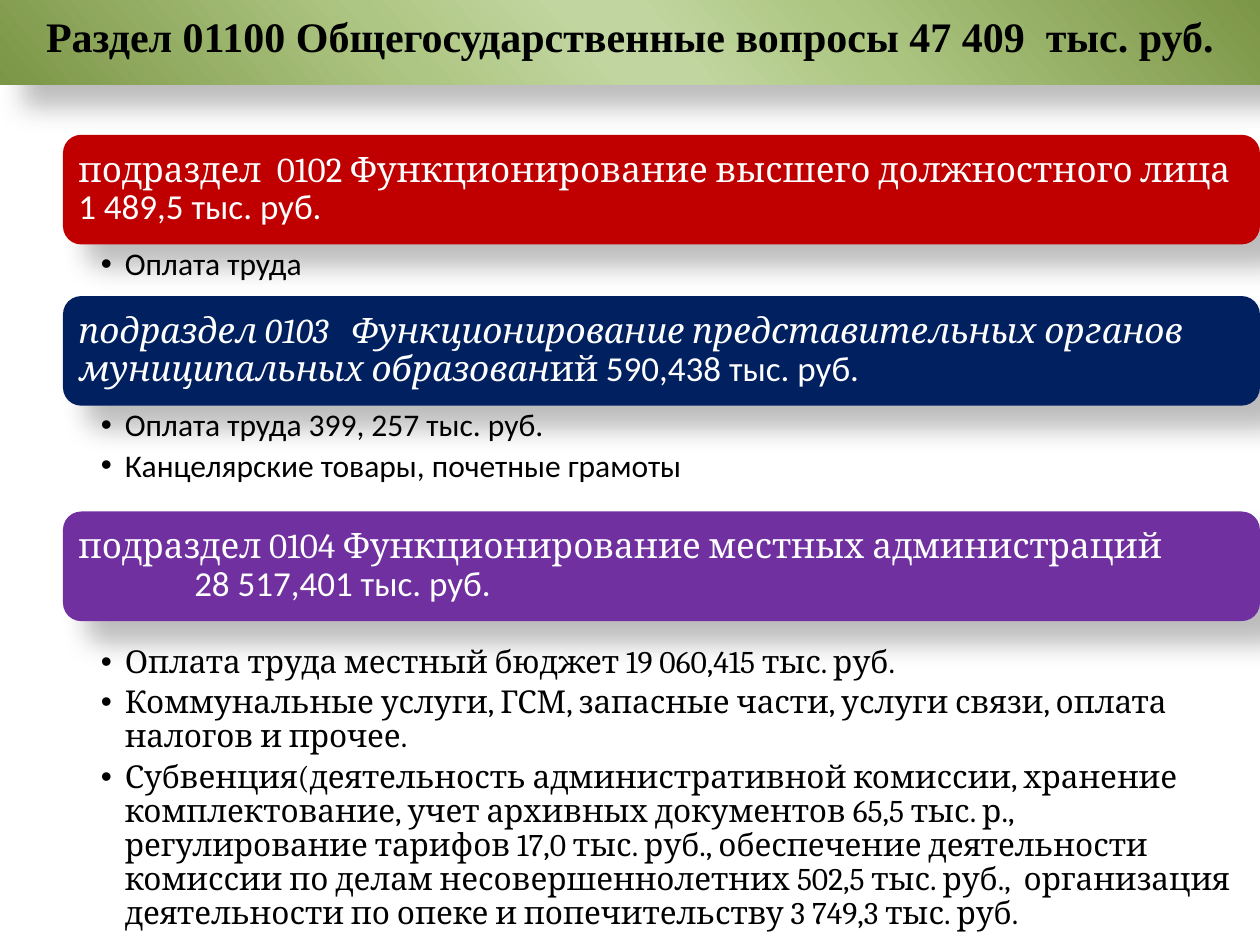
from lxml.etree import SubElement
from pptx import Presentation
from pptx.dml.color import RGBColor
from pptx.enum.shapes import MSO_SHAPE
from pptx.enum.text import MSO_ANCHOR, MSO_AUTO_SIZE, PP_ALIGN
from pptx.oxml.ns import qn
from pptx.util import Inches, Pt

SERIF, SANS, TITLE_FONT = "Cambria", "Calibri", "Times New Roman"
WHITE, BLACK = "FFFFFF", "000000"
TITLE_STOPS = [(0, "7C9647"), (33, "ADC682"), (47, "C0D59F"),
               (53, "C0D59F"), (68, "AEC683"), (100, "7C9647")]
LEFT, WIDTH, BAND_ROWS = 5, 95, 8.7

SECTIONS = [
    {
        "row": 10.7, "gap": 0, "rows": 4.2, "slot": 1, "color": "C00000", "font": SANS,
        "heading": [
            ("подраздел  0102 Функционирование высшего должностного лица ", SERIF, False),
            ("1 489,5 тыс. руб.", SANS, False),
        ],
        "items": ["Оплата труда"],
    },
    {
        "row": 23.5, "gap": 0, "rows": 10.2, "slot": 2, "color": "002060", "font": SANS,
        "heading": [
            ("подраздел 0103   Функционирование представительных органов "
             "муниципальных образован", SERIF, True),
            ("ий ", SERIF, False),
            ("590,438 тыс. руб.", SANS, False),
        ],
        "items": ["Оплата труда 399, 257 тыс. руб.", "Канцелярские товары, почетные грамоты"],
    },
    {
        "row": 40.6, "gap": 1.7, "rows": 23.4, "slot": 4, "color": "7030A0", "font": SERIF,
        "heading": [
            ("подраздел 0104 Функционирование местных администраций", SERIF, False),
            None,
            ("\t28 517,401 тыс. руб.", SANS, False),
        ],
        "items": [
            "Оплата труда местный бюджет 19 060,415 тыс. руб.",
            "Коммунальные услуги, ГСМ, запасные части, услуги связи, оплата налогов и прочее.",
            "Субвенция(деятельность административной комиссии, хранение комплектование, "
            "учет архивных документов 65,5 тыс. р., регулирование тарифов 17,0 тыс. руб., "
            "обеспечение деятельности комиссии по делам несовершеннолетних 502,5 тыс. руб.,  "
            "организация деятельности по опеке и попечительству 3 749,3 тыс. руб.",
        ],
    },
]


def rgb(value):
    return RGBColor.from_string(value)


class BudgetPage:
    """Holds the deck, its current page and the style on a grid of 100 columns by 75 rows."""

    def __init__(self):
        self.deck = Presentation()
        self.deck.slide_width, self.deck.slide_height = Inches(10), Inches(7.5)
        self.page = self.deck.slides.add_slide(self.deck.slide_layouts[4])
        self.slots = {slot.placeholder_format.idx: slot for slot in self.page.placeholders}

    def area(self, column, row, columns, rows):
        across, down = self.deck.slide_width / 100, self.deck.slide_height / 75
        return [round(n) for n in (column * across, row * down, columns * across, rows * down)]

    def place(self, box, *cells):
        box.left, box.top, box.width, box.height = self.area(*cells)

    def frame(self, box, insets, anchor):
        frame = box.text_frame
        frame.word_wrap, frame.auto_size = True, MSO_AUTO_SIZE.NONE
        frame.vertical_anchor = anchor
        (frame.margin_left, frame.margin_top,
         frame.margin_right, frame.margin_bottom) = map(Inches, insets)
        return frame

    def style(self, paragraph, size, color, name=None, bold=False):
        paragraph.space_before = Pt(0)
        font = paragraph.font
        font.size, font.bold, font.color.rgb = Pt(size), bold, rgb(color)
        if name:
            font.name = name

    def shadow(self, box):
        box.shadow.inherit = False
        effects = box._element.spPr.find(qn("a:effectLst"))
        outer = SubElement(effects, qn("a:outerShdw"), blurRad=str(Pt(15)), dist=str(Pt(18)),
                           dir="2700000", algn="tl", rotWithShape="0")
        color = SubElement(outer, qn("a:srgbClr"), val=BLACK)
        SubElement(color, qn("a:alpha"), val="26000")

    def title(self, text):
        box = self.page.shapes.title
        self.place(box, 0, 0, 100, 6.7)
        box.fill.gradient()
        gradient = box._element.spPr.find(qn("a:gradFill"))
        for child in list(gradient):
            gradient.remove(child)
        stops = SubElement(gradient, qn("a:gsLst"))
        for position, color in TITLE_STOPS:
            stop = SubElement(stops, qn("a:gs"), pos=str(position * 1000))
            SubElement(stop, qn("a:srgbClr"), val=color)
        SubElement(gradient, qn("a:lin"), ang=str(139 * 60000), scaled="0")
        self.shadow(box)
        paragraph = self.frame(box, (0.1, 0.08, 0.1, 0.05), MSO_ANCHOR.TOP).paragraphs[0]
        paragraph.text, paragraph.alignment = text, PP_ALIGN.CENTER
        self.style(paragraph, 24, BLACK, TITLE_FONT, bold=True)

    def band(self, row, color, heading):
        box = self.page.shapes.add_shape(
            MSO_SHAPE.ROUNDED_RECTANGLE, *self.area(LEFT, row, WIDTH, BAND_ROWS))
        box.fill.solid()
        box.fill.fore_color.rgb = rgb(color)
        box.line.fill.background()
        self.shadow(box)
        paragraph = self.frame(box, [0.08] * 4, MSO_ANCHOR.MIDDLE).paragraphs[0]
        paragraph.alignment, paragraph.line_spacing = PP_ALIGN.LEFT, 0.9
        tabs = SubElement(paragraph._p.get_or_add_pPr(), qn("a:tabLst"))
        SubElement(tabs, qn("a:tab"), pos=str(Inches(0.92)), algn="l")
        self.style(paragraph, 20, WHITE)
        for piece in heading:
            if piece is None:
                paragraph.add_line_break()
                continue
            span = paragraph.add_run()
            span.text, span.font.name, span.font.italic = piece

    def bullets(self, slot, row, rows, items, font):
        box = self.slots[slot]
        self.place(box, LEFT, row, WIDTH, rows)
        frame = self.frame(box, (0.3, 0.03, 0.18, 0.03), MSO_ANCHOR.TOP)
        for number, item in enumerate(items):
            paragraph = frame.add_paragraph() if number else frame.paragraphs[0]
            paragraph.text, paragraph.line_spacing = item, 0.9
            paragraph.space_after = Pt(3.6)
            properties = paragraph._p.get_or_add_pPr()
            properties.set("marL", str(Inches(0.19)))
            properties.set("indent", str(Inches(-0.19)))
            SubElement(properties, qn("a:buFont"), typeface="Arial")
            SubElement(properties, qn("a:buChar"), char="•")
            self.style(paragraph, 18, BLACK, font)

    def save(self):
        for slot in list(self.page.placeholders):
            if not slot.text_frame.text:
                slot._element.getparent().remove(slot._element)
        self.deck.save("out.pptx")


def main():
    page = BudgetPage()
    page.title("Раздел 01100 Общегосударственные вопросы 47 409  тыс. руб.")
    for section in SECTIONS:
        page.band(section["row"], section["color"], section["heading"])
        list_row = section["row"] + BAND_ROWS + section["gap"]
        page.bullets(section["slot"], list_row, section["rows"], section["items"], section["font"])
    page.save()


if __name__ == "__main__":
    main()
